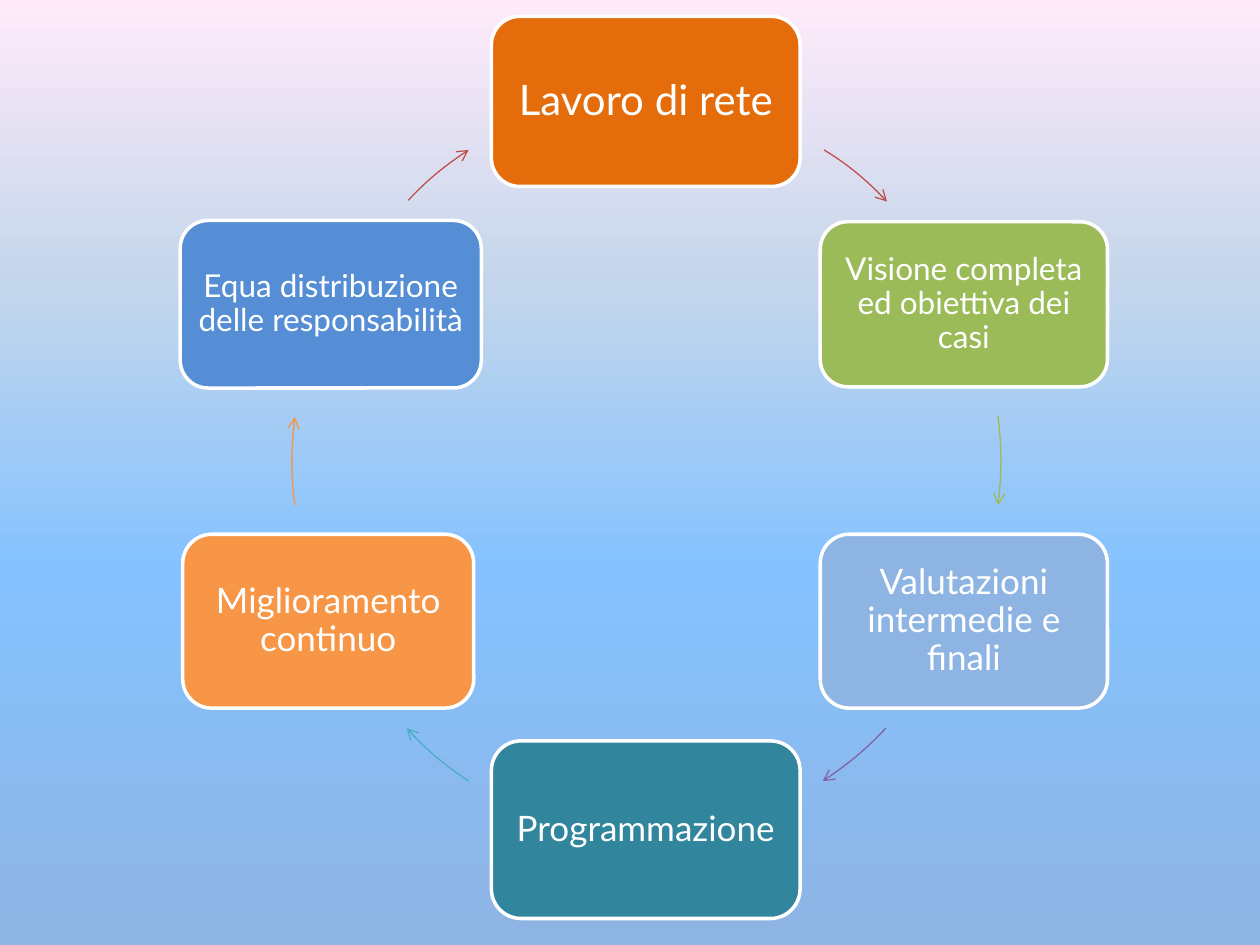
from lxml import etree
from pptx import Presentation
from pptx.dml.color import RGBColor
from pptx.enum import shapes, text
from pptx.oxml import parse_xml
from pptx.oxml.ns import nsdecls, qn
from pptx.util import Inches, Pt

FONT = "Lato"
WHITE = "FFFFFF"
INSETS = {18: 0.07, 20: 0.08, 24: 0.1}  # text size: inner margin
RING = Inches(5.78)  # diameter of the circle each arrow is an arc of
BACKGROUND = [(0, "8EB4E3"), (40, "85C2FF"), (70, "C4D6EB"), (100, "FFEBFA")]

# Label, size, fill, left, top, width, height
STEPS = [
    ("Lavoro di rete", 24, "E46C0A", 3.9, 0.13, 2.45, 1.35),
    ("Visione completa ed obiettiva dei casi", 18, "9BBB59", 6.51, 1.76, 2.28, 1.31),
    ("Valutazioni intermedie e finali", 20, "8EB4E3", 6.51, 4.24, 2.28, 1.38),
    ("Programmazione", 20, "31859C", 3.9, 5.88, 2.45, 1.41),
    ("Miglioramento continuo", 20, "F79646", 1.45, 4.24, 2.31, 1.38),
    ("Equa distribuzione delle responsabilità", 18, "558ED5", 1.43, 1.75, 2.39, 1.33),
]

# Colour, corner of the ring, then start, two control points and end of the arc
ARROWS = [
    ("C0504D", (2.09, 0.73), [(6.54, 1.19), (6.72, 1.3), (6.89, 1.44), (7.04, 1.6)]),
    ("9BBB59", (2.17, 0.76), [(7.92, 3.3), (7.95, 3.54), (7.95, 3.78), (7.92, 4.01)]),
    ("8064A2", (2.04, 0.91), [(7.03, 5.78), (6.88, 5.94), (6.71, 6.08), (6.53, 6.2)]),
    ("4BACC6", (2.43, 0.91), [(3.72, 6.2), (3.54, 6.08), (3.37, 5.94), (3.23, 5.78)]),
    ("F79646", (2.32, 0.8), [(2.34, 4.01), (2.31, 3.78), (2.31, 3.54), (2.34, 3.31)]),
    ("C0504D", (2.43, 0.71), [(3.24, 1.59), (3.38, 1.44), (3.55, 1.3), (3.72, 1.19)]),
]


def color(hex_value):
    return RGBColor.from_string(hex_value)


def set_background(slide):
    fill = slide.background.fill
    fill.gradient()
    fill.gradient_angle = 90
    # Replace the two default stops
    stops = slide._element.xpath(".//a:gsLst")[0]
    for stop in list(stops):
        stops.remove(stop)
    for position, hex_value in BACKGROUND:
        stops.append(parse_xml(
            f'<a:gs {nsdecls("a")} pos="{position * 1000}">'
            f'<a:srgbClr val="{hex_value}"/></a:gs>'))


def set_outline(shape, hex_value, width):
    shape.shadow.inherit = False
    shape.line.color.rgb = color(hex_value)
    shape.line.width = Pt(width)


def add_step(slide, label, size, fill, *box):
    step = slide.shapes.add_shape(
        shapes.MSO_SHAPE.ROUNDED_RECTANGLE, *map(Inches, box))
    step.fill.solid()
    step.fill.fore_color.rgb = color(fill)
    set_outline(step, WHITE, 2)

    frame = step.text_frame
    frame.word_wrap = True
    frame.vertical_anchor = text.MSO_ANCHOR.MIDDLE
    frame.margin_left = frame.margin_right = Inches(INSETS[size])
    frame.margin_top = frame.margin_bottom = Inches(INSETS[size])
    paragraph = frame.paragraphs[0]
    paragraph.text = label
    paragraph.alignment = text.PP_ALIGN.CENTER
    paragraph.line_spacing = 0.9
    paragraph.font.name = FONT
    paragraph.font.size = Pt(size)
    paragraph.font.color.rgb = color(WHITE)


def add_curved_arrow(slide, hex_value, corner, points):
    start, *rest = [(Inches(x), Inches(y)) for x, y in points]
    builder = slide.shapes.build_freeform(*start)
    builder.add_line_segments(rest, close=False)
    arrow = builder.convert_to_shape()
    arrow.fill.background()
    set_outline(arrow, hex_value, 0.75)

    # Join the three segments into one Bézier curve
    segments = arrow._element.xpath(".//a:lnTo")
    outline = segments[0].getparent()
    curve = etree.SubElement(outline, qn("a:cubicBezTo"))
    for segment in segments:
        curve.append(segment[0])
        outline.remove(segment)

    # Let the frame span the whole ring, with the arc placed inside it
    arrow.left, arrow.top = map(Inches, corner)
    arrow.width = arrow.height = RING
    outline.set("w", str(RING))
    outline.set("h", str(RING))
    for node, (x, y) in zip(outline.iter(qn("a:pt")), [start, *rest]):
        node.set("x", str(x - arrow.left))
        node.set("y", str(y - arrow.top))
    etree.SubElement(arrow.line._get_or_add_ln(), qn("a:tailEnd"), type="arrow")


def main():
    prs = Presentation()
    prs.slide_width, prs.slide_height = Inches(10), Inches(7.5)
    slide = prs.slides.add_slide(prs.slide_layouts[6])
    set_background(slide)

    # Cycle: each step is followed by the arrow to the next
    for step, arrow in zip(STEPS, ARROWS):
        add_step(slide, *step)
        add_curved_arrow(slide, *arrow)

    prs.save("out.pptx")


if __name__ == "__main__":
    main()
